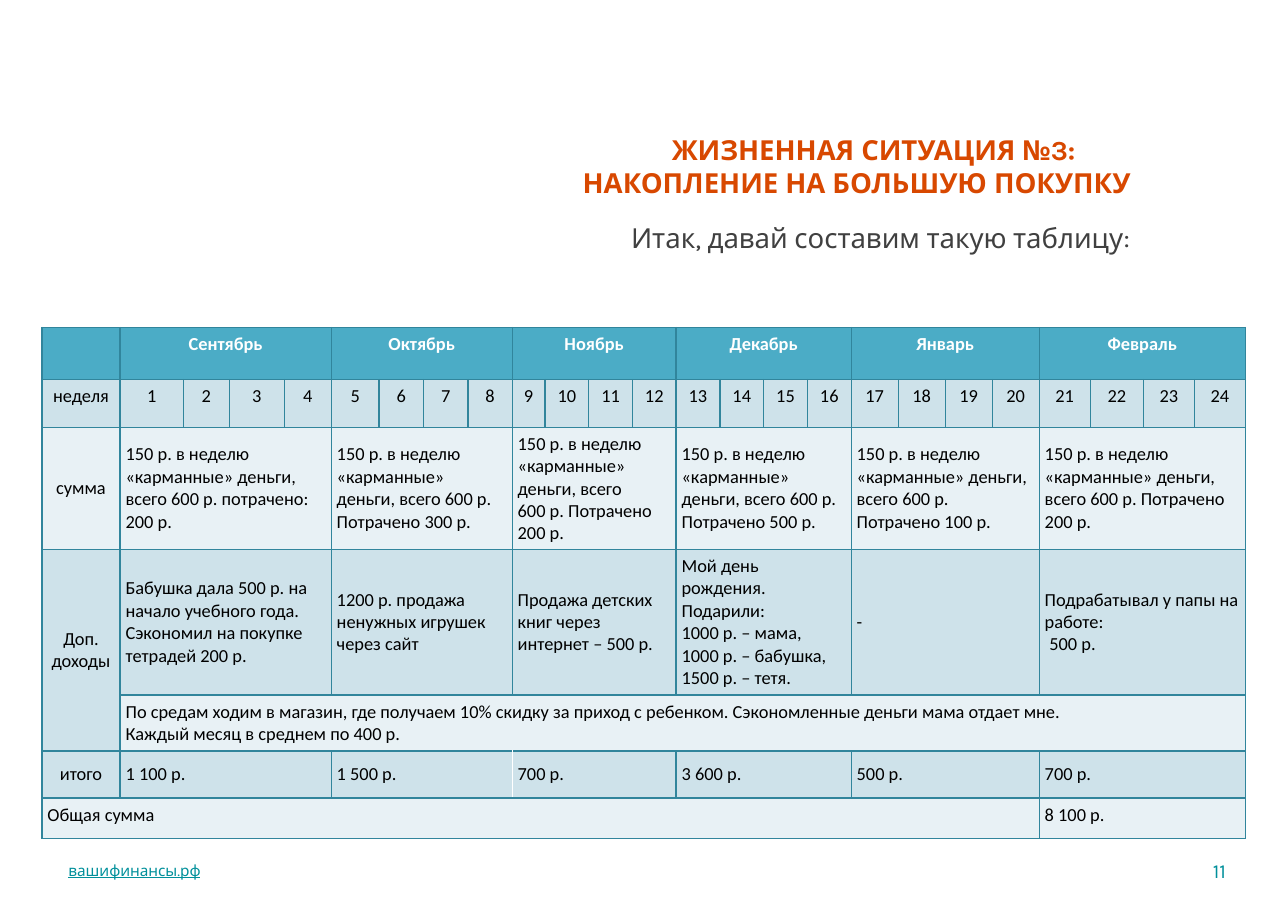
"""Builds the savings plan slide with its table of six months."""
from dataclasses import dataclass

from lxml.etree import SubElement
from pptx import Presentation
from pptx.dml.color import RGBColor
from pptx.enum.text import MSO_ANCHOR as Anchor, PP_ALIGN as Align
from pptx.oxml.ns import qn
from pptx.util import Pt

ORANGE, GREY, TEAL = "D84800", "404040", "00909B"
WHITE, BLACK, BORDER = "FFFFFF", "000000", "31859C"
HEADER, DARK_BAND, LIGHT_BAND = "4BACC6", "CEE2EA", "E8F1F5"
INSET = 3.6
WEEKS = 4
TOTAL_ROW = 5
LAST_ROW = 6


@dataclass
class Style:
    """Look of a run of text."""
    size: float
    font: str
    color: str
    bold: bool = False
    underline: bool = False


@dataclass
class Line:
    """One paragraph and its left indent."""
    text: str
    indent: float = 0


@dataclass
class Label:
    """A text box outside the table."""
    left: float
    top: float
    width: float
    height: float
    lines: list[Line]
    style: Style
    align: Align = Align.LEFT
    anchor: Anchor = Anchor.TOP
    wrap: bool = True


@dataclass
class Month:
    """One month: week widths and the entries below its name."""
    name: str
    widths: list[float]
    allowance: list[Line]
    extra: list[Line]
    total: str


@dataclass
class Entry:
    """A table cell with the block that it spans."""
    row: int
    column: int
    lines: list[Line]
    columns: int = 1
    rows: int = 1


POCKET = "150 р. в неделю «карманные» деньги, всего"

LABELS = [
    Label(41, 558, 286, 20, [Line("вашифинансы.рф")],
          Style(10, "Karla", TEAL, underline=True), anchor=Anchor.MIDDLE),
    Label(781, 556, 23, 24, [Line("11")], Style(13, "Karla", TEAL),
          Align.RIGHT, Anchor.MIDDLE, False),
    Label(345.6, 83, 427.6, 82,
          [Line("ЖИЗНЕННАЯ СИТУАЦИЯ №3:", 22), Line("НАКОПЛЕНИЕ НА БОЛЬШУЮ ПОКУПКУ")],
          Style(18, "Karla", ORANGE, bold=True), Align.CENTER),
    Label(396, 140.4, 349, 45, [Line("Итак, давай составим такую таблицу:", 12.5)],
          Style(18, "Karla", GREY)),
]

MONTHS = [
    Month("Сентябрь", [41.3, 30, 35.9, 30.7],
          [Line(f"{POCKET} 600 р. потрачено: 200 р.")],
          [Line("Бабушка дала 500 р. на начало учебного года."),
           Line("Сэкономил на покупке тетрадей 200 р.")], "1 100 р."),
    Month("Октябрь", [31.3, 28.9, 29.1, 28.9],
          [Line(f"{POCKET} 600 р. Потрачено 300 р.")],
          [Line("1200 р. продажа ненужных игрушек через сайт")], "1 500 р."),
    Month("Ноябрь", [21.5, 28.6, 28.5, 28.5],
          [Line(POCKET), Line("600 р. Потрачено 200 р.")],
          [Line("Продажа детских книг через интернет – 500 р.")], "700 р."),
    Month("Декабрь", [28.6] * WEEKS,
          [Line(f"{POCKET} 600 р."), Line("Потрачено 500 р.")],
          [Line("Мой день рождения."), Line("Подарили:"), Line("1000 р. – мама,"),
           Line("1000 р. – бабушка,"), Line("1500 р. – тетя.")], "3 600 р."),
    Month("Январь", [30.7] * WEEKS,
          [Line(f"{POCKET} 600 р. Потрачено 100 р.")], [Line("-")], "500 р."),
    Month("Февраль", [33.3, 34.8, 33.3, 33.3],
          [Line(f"{POCKET} 600 р. Потрачено 200 р.")],
          [Line("Подрабатывал у папы на работе:"), Line("500 р.", 3)], "700 р."),
]

ROW_HEIGHTS = [34, 31.2, 79.6, 95.2, 36.6, 30.7, 26.5]


def rgb(value: str) -> RGBColor:
    """Turn a hex string into a colour."""
    return RGBColor.from_string(value)


def write(frame, lines: list[Line], style: Style, align: Align) -> None:
    """Fill a text frame with styled paragraphs."""
    for index, line in enumerate(lines):
        para = frame.add_paragraph() if index else frame.paragraphs[0]
        para.alignment = align
        if line.indent:
            properties = para._p.get_or_add_pPr()
            properties.set("marL", str(Pt(line.indent)))
            properties.set("indent", "0")
        span = para.add_run()
        span.text = line.text
        font = span.font
        font.size, font.name = Pt(style.size), style.font
        font.bold, font.underline = style.bold, style.underline
        font.color.rgb = rgb(style.color)


def set_margins(holder) -> None:
    """Give a text frame or a cell equal margins."""
    holder.margin_left = holder.margin_right = Pt(INSET)
    holder.margin_top = holder.margin_bottom = Pt(INSET)


def add_label(page, label: Label) -> None:
    """Draw a text box."""
    box = page.shapes.add_textbox(Pt(label.left), Pt(label.top),
                                  Pt(label.width), Pt(label.height))
    frame = box.text_frame
    frame.word_wrap, frame.vertical_anchor = label.wrap, label.anchor
    set_margins(frame)
    write(frame, label.lines, label.style, label.align)


def add_borders(cell, left: str = BORDER, right: str = BORDER) -> None:
    """Draw the four sides of a cell."""
    properties = cell._tc.get_or_add_tcPr()
    sides = {"a:lnL": left, "a:lnR": right, "a:lnT": BORDER, "a:lnB": BORDER}
    for tag, color in sides.items():
        side = SubElement(properties, qn(tag), w=str(Pt(1)))
        fill = SubElement(side, qn("a:solidFill"))
        SubElement(fill, qn("a:srgbClr"), val=color)


def list_entries() -> list[Entry]:
    """Lay the plan out as table cells."""
    names = {1: "неделя", 2: "сумма", TOTAL_ROW: "итого"}
    entries = [Entry(row, 0, [Line(name)]) for row, name in names.items()]
    entries.append(Entry(3, 0, [Line("Доп. доходы")], rows=2))
    for index, month in enumerate(MONTHS):
        start = 1 + index * WEEKS
        blocks = {0: [Line(month.name)], 2: month.allowance, 3: month.extra,
                  TOTAL_ROW: [Line(month.total)]}
        entries += [Entry(row, start, lines, WEEKS) for row, lines in blocks.items()]
        entries += [Entry(1, week, [Line(str(week))]) for week in range(start, start + WEEKS)]
    discount = [Line("По средам ходим в магазин, где получаем 10% скидку за приход с ребенком. "
                     "Сэкономленные деньги мама отдает мне."),
                Line("Каждый месяц в среднем по 400 р.")]
    entries += [Entry(4, 1, discount, 24), Entry(LAST_ROW, 0, [Line("Общая сумма")], 21),
                Entry(LAST_ROW, 21, [Line("8 100 р.")], WEEKS)]
    return entries


def add_plan(page) -> None:
    """Draw the table of months."""
    widths = [51] + [width for month in MONTHS for width in month.widths]
    frame = page.shapes.add_table(len(ROW_HEIGHTS), len(widths), Pt(27.4), Pt(213.8),
                                  Pt(sum(widths)), Pt(sum(ROW_HEIGHTS)))
    table = frame.table
    table.first_row = table.horz_banding = False
    for column, width in zip(table.columns, widths):
        column.width = Pt(width)
    for number, (row, height) in enumerate(zip(table.rows, ROW_HEIGHTS)):
        row.height = Pt(height)
        band = DARK_BAND if number % 2 else LIGHT_BAND
        for position, cell in enumerate(row.cells):
            add_borders(cell,
                        WHITE if (number, position) == (TOTAL_ROW, 9) else BORDER,
                        WHITE if number == TOTAL_ROW and 5 <= position <= 8 else BORDER)
            cell.fill.solid()
            cell.fill.fore_color.rgb = rgb(band if number else HEADER)
            set_margins(cell)
    for entry in list_entries():
        cell = table.cell(entry.row, entry.column)
        if entry.rows * entry.columns > 1:
            cell.merge(table.cell(entry.row + entry.rows - 1, entry.column + entry.columns - 1))
        centred = entry.row < 2 or (entry.column == 0 and entry.row < LAST_ROW)
        cell.vertical_anchor = Anchor.MIDDLE if 2 <= entry.row <= TOTAL_ROW else Anchor.TOP
        style = Style(12, "Calibri", BLACK if entry.row else WHITE, bold=entry.row == 0)
        write(cell.text_frame, entry.lines, style, Align.CENTER if centred else Align.LEFT)


def main() -> None:
    """Build and save the deck."""
    deck = Presentation()
    deck.slide_width, deck.slide_height = Pt(840.96), Pt(594.72)
    page = deck.slides.add_slide(deck.slide_layouts[6])
    for label in LABELS:
        add_label(page, label)
    add_plan(page)
    deck.save("out.pptx")


if __name__ == "__main__":
    main()
